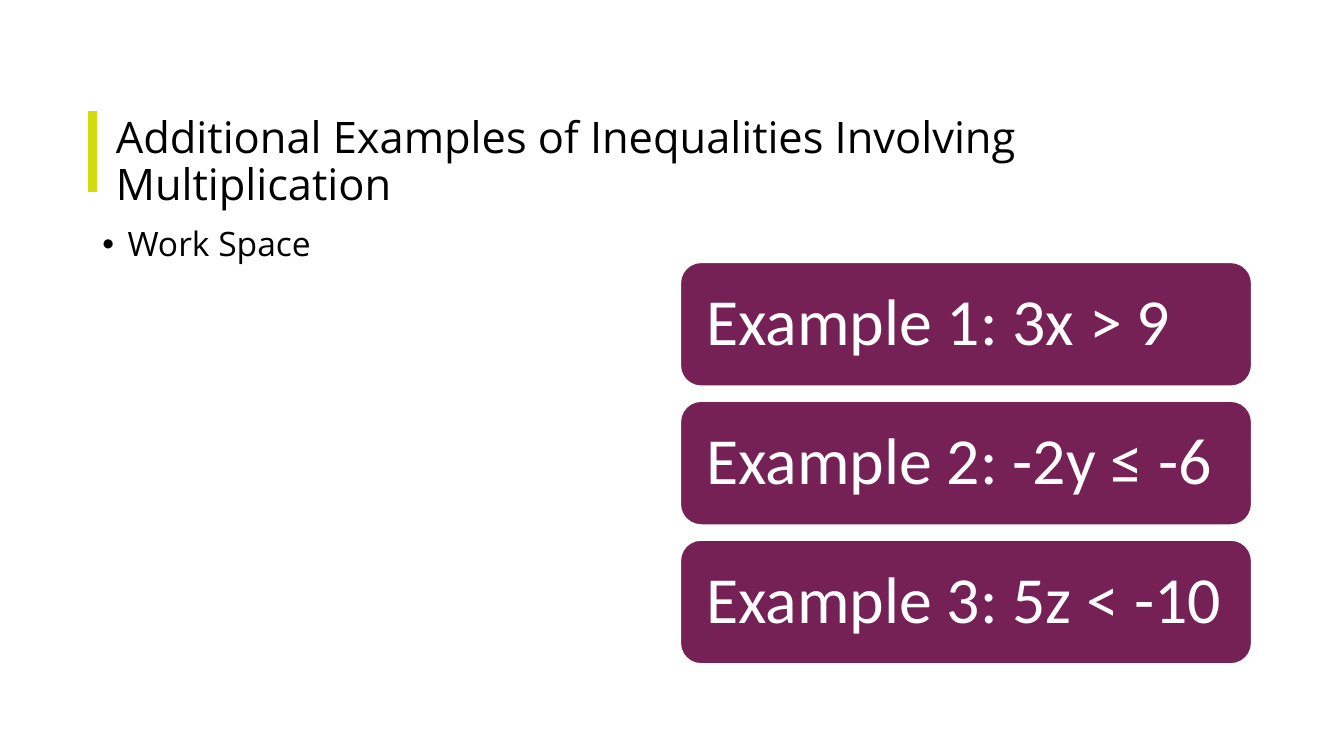
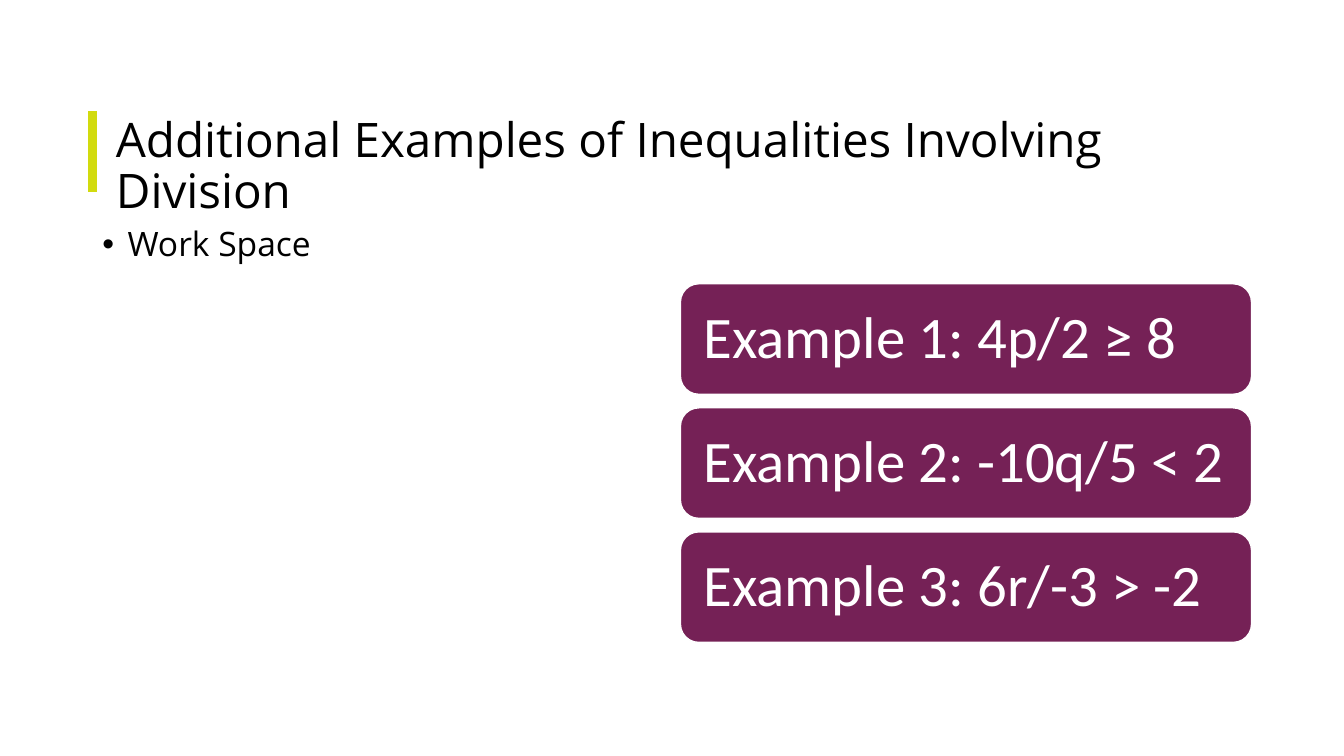
from pptx import Presentation
from pptx.dml.color import RGBColor
from pptx.enum.shapes import MSO_CONNECTOR, MSO_SHAPE
from pptx.enum.text import MSO_ANCHOR, MSO_AUTO_SIZE, PP_ALIGN
from pptx.oxml.ns import qn
from pptx.util import Pt
from lxml import etree

STRAIGHT = MSO_CONNECTOR.STRAIGHT
ROUNDED = MSO_SHAPE.ROUNDED_RECTANGLE
TOP, MIDDLE = MSO_ANCHOR.TOP, MSO_ANCHOR.MIDDLE
NO_FIT = MSO_AUTO_SIZE.NONE
LEFT = PP_ALIGN.LEFT

BLACK = RGBColor(0x00, 0x00, 0x00)
WHITE = RGBColor(0xFF, 0xFF, 0xFF)
LIME = RGBColor(0xD2, 0xDB, 0x0E)
PLUM = RGBColor(0x75, 0x21, 0x56)

TITLE_ONLY = 5

LESSONS = [
    ("Additional Examples of Inequalities Involving Multiplication", 31, 47,
     ["Example 1: 3x > 9", "Example 2: -2y ≤ -6", "Example 3: 5z < -10"]),
    ("Additional Examples of Inequalities Involving Division", 34, 42,
     ["Example 1: 4p/2 ≥ 8", "Example 2: -10q/5 < 2", "Example 3: 6r/-3 > -2"]),
]


class LessonDeck:
    text_font = "Open Sans"
    example_font = "Calibri"
    line_spacing = 0.9
    title_top, title_height = 79.2, 57.6
    accent_left = 66
    examples_left, examples_width, examples_middle = 486, 408, 330.8

    def __init__(self):
        self.deck = Presentation()
        self.deck.slide_width = Pt(960)
        self.deck.slide_height = Pt(540)
        self.page = None

    def add_page(self, title, title_size):
        self.page = self.deck.slides.add_slide(self.deck.slide_layouts[TITLE_ONLY])
        self.add_accent()
        box = self.page.shapes.title
        box.left, box.top = Pt(75.6), Pt(self.title_top)
        box.width, box.height = Pt(828), Pt(self.title_height)
        self.add_text(box, title, title_size, self.text_font, BLACK, TOP)

    def add_accent(self):
        bottom = self.title_top + self.title_height
        line = self.page.shapes.add_connector(
            STRAIGHT, Pt(self.accent_left), Pt(self.title_top),
            Pt(self.accent_left), Pt(bottom))
        line.line.color.rgb = LIME
        line.line.width = Pt(6)
        etree.SubElement(line._element.spPr, qn("a:effectLst"))

    def add_bullet(self, text):
        box = self.page.shapes.add_textbox(
            Pt(self.accent_left), Pt(159), Pt(408), Pt(343))
        para = box.text_frame.paragraphs[0]
        properties = para._p.get_or_add_pPr()
        properties.set("marL", str(Pt(18)))
        properties.set("indent", str(-Pt(18)))
        etree.SubElement(properties, qn("a:buFont"), typeface="Arial")
        etree.SubElement(properties, qn("a:buChar"), char="•")
        self.add_text(box, text, 24, self.text_font, BLACK, TOP)

    def add_examples(self, examples, size):
        height, gap = 1.88 * size, 0.23 * size
        pitch = height + gap
        first_top = self.examples_middle - (len(examples) * pitch - gap) / 2
        for index, example in enumerate(examples):
            self.add_example(example, size, first_top + index * pitch, height)

    def add_example(self, text, size, top, height):
        box = self.page.shapes.add_shape(
            ROUNDED, Pt(self.examples_left), Pt(top),
            Pt(self.examples_width), Pt(height))
        box.shadow.inherit = False
        box.fill.solid()
        box.fill.fore_color.rgb = PLUM
        box.line.color.rgb = WHITE
        box.line.width = Pt(1)
        frame = box.text_frame
        inset = Pt(0.3 * size)
        frame.margin_left = frame.margin_right = inset
        frame.margin_top = frame.margin_bottom = inset
        self.add_text(box, text, size, self.example_font, WHITE, MIDDLE)

    def add_text(self, box, text, size, font, color, anchor):
        frame = box.text_frame
        frame.word_wrap = True
        frame.auto_size = NO_FIT
        frame.vertical_anchor = anchor
        para = frame.paragraphs[0]
        para.alignment = LEFT
        para.line_spacing = self.line_spacing
        para.space_before = Pt(0)
        span = para.add_run()
        span.text = text
        span.font.name = font
        span.font.size = Pt(size)
        span.font.color.rgb = color


def main():
    lesson = LessonDeck()
    for title, title_size, example_size, examples in LESSONS:
        lesson.add_page(title, title_size)
        lesson.add_bullet("Work Space")
        lesson.add_examples(examples, example_size)
    lesson.deck.save("out.pptx")


if __name__ == "__main__":
    main()
